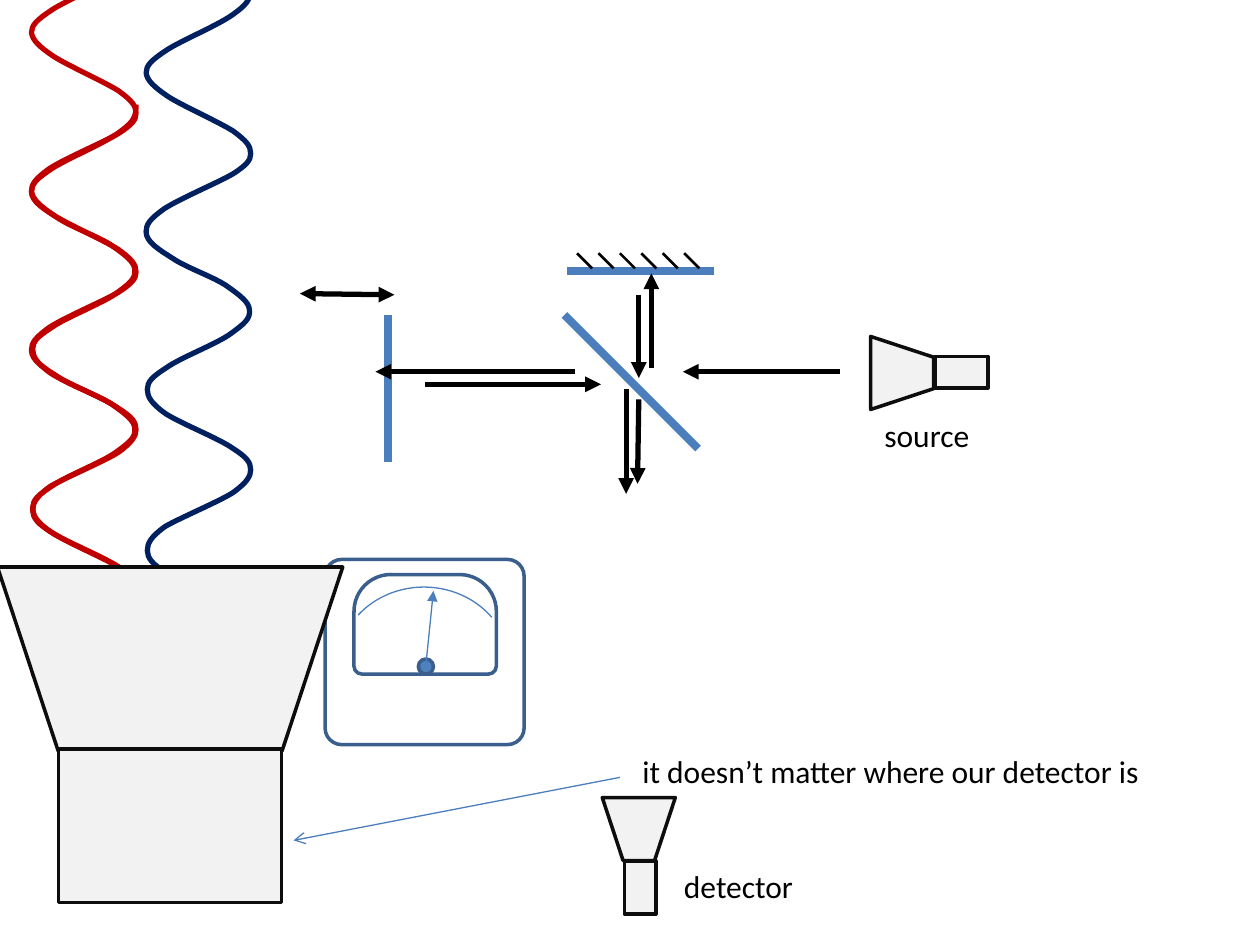
"""Build a slide of an interferometer with its waves, source, detector and meter."""
from dataclasses import dataclass

from lxml.etree import SubElement
from pptx import Presentation
from pptx.dml.color import RGBColor
from pptx.enum.shapes import MSO_CONNECTOR, MSO_SHAPE as Geom
from pptx.enum.text import MSO_AUTO_SIZE
from pptx.oxml.ns import qn
from pptx.util import Inches, Pt


@dataclass(frozen=True)
class Theme:
    font: str = "Calibri"
    label_size: float = 18
    ink: str = "000000"
    outline: str = "0D0D0D"
    body: str = "F2F2F2"
    glass: str = "4B7EBC"
    meter_edge: str = "3A5F8C"
    pivot: str = "4F81BD"
    white: str = "FFFFFF"
    red: str = "C00000"
    navy: str = "002060"
    hair: float = 0.75
    hatch: float = 1.5
    edge: float = 2
    beam: float = 3
    mirror: float = 4.5


THEME = Theme()

WAVE_START = (1.08, -0.43)
WAVE_CURVES = [
    ((1.08, -0.34), (1.07, -0.3), (0.96, -0.22)), ((0.85, -0.13), (0.53, 0), (0.41, 0.08)),
    ((0.29, 0.16), (0.25, 0.2), (0.25, 0.26)), ((0.26, 0.32), (0.31, 0.37), (0.43, 0.45)),
    ((0.54, 0.52), (0.83, 0.65), (0.94, 0.72)), ((1.05, 0.8), (1.08, 0.84), (1.08, 0.9)),
    ((1.08, 0.95), (1.05, 0.99), (0.94, 1.06)), ((0.82, 1.13), (0.51, 1.26), (0.39, 1.34)),
    ((0.28, 1.42), (0.25, 1.46), (0.25, 1.52)), ((0.25, 1.6), (0.35, 1.66), (0.46, 1.73)),
    ((0.56, 1.8), (0.79, 1.88), (0.89, 1.95)), ((0.99, 2.02), (1.07, 2.08), (1.07, 2.14)),
    ((1.08, 2.21), (1.03, 2.25), (0.92, 2.33)), ((0.81, 2.41), (0.52, 2.52), (0.41, 2.6)),
    ((0.3, 2.67), (0.26, 2.71), (0.26, 2.77)), ((0.26, 2.83), (0.29, 2.88), (0.4, 2.96)),
    ((0.52, 3.04), (0.83, 3.16), (0.94, 3.24)), ((1.05, 3.31), (1.08, 3.35), (1.08, 3.41)),
    ((1.08, 3.46), (1.05, 3.51), (0.94, 3.59)), ((0.83, 3.66), (0.52, 3.79), (0.4, 3.86)),
    ((0.29, 3.94), (0.26, 3.99), (0.26, 4.05)), ((0.26, 4.11), (0.3, 4.16), (0.42, 4.23)),
    ((0.54, 4.31), (0.85, 4.44), (0.96, 4.51)), ((1.07, 4.58), (1.06, 4.63), (1.08, 4.66)),
]
UPPER_RED, LOWER_RED, NAVY = (0, 0), (0, 1.26), (0.91, 0.32)

SOURCE = ("source", 6.92, 3.25, 0.92, 0.42)
REMARK = ("it doesn’t matter where our detector is", 5, 5.92, 4.83, 0.4)
DETECTOR = ("detector", 5.33, 6.83, 1.08, 0.4)

MIRRORS = [
    ((4.48, 2.5), (5.54, 3.56)),
    ((3.08, 2.5), (3.08, 3.67)),
    ((5.67, 2.15), (4.5, 2.15)),
]
HATCH_COUNT, HATCH_LEFT, HATCH_TOP, HATCH_PITCH, HATCH_SIZE = 6, 4.58, 2.01, 0.17, 0.12
MIRROR_TRAVEL = ((2.38, 2.33), (3.13, 2.34))
BEAMS = [
    ((6.67, 2.95), (5.42, 2.95)),
    ((4.56, 2.95), (2.98, 2.95)),
    ((3.37, 3.05), (4.77, 3.05)),
    ((4.97, 3.09), (4.97, 3.92)),
    ((5.17, 2.92), (5.17, 2.17)),
    ((5.07, 2.34), (5.07, 3)),
    ((5.07, 3.17), (5.06, 3.84)),
]
METER = [
    (Geom.ROUND_2_SAME_RECTANGLE, (2.58, 4.44, 1.58, 1.47), (0.09, 0.09), THEME.white, THEME.meter_edge, THEME.edge),
    (Geom.ROUND_2_SAME_RECTANGLE, (2.81, 4.56, 1.13, 0.79), (0.37, 0.08), THEME.white, THEME.meter_edge, THEME.edge),
    (Geom.OVAL, (3.32, 5.23, 0.12, 0.12), (), THEME.pivot, THEME.meter_edge, THEME.edge),
    (Geom.ARC, (2.68, 4.66, 1.37, 1.26), (130.84, 194.45), None, THEME.glass, THEME.hair),
]
NEEDLE = ((3.38, 5.28), (3.44, 4.69))
POINTER = ((4.92, 6.17), (2.33, 6.67))
SOURCE_HORN = ((6.87, 2.71, 0.58, 0.5), 90, (7.42, 2.83, 0.42, 0.25), 0)
LARGE_HORN = ((-0.02, 4.5, 2.74, 1.46), 180, (0.74, 5.67, 1.22, 1.77), 90)
SMALL_HORN = ((4.78, 6.33, 0.58, 0.5), 180, (4.87, 6.92, 0.42, 0.25), 90)


def set_line(line, color, width):
    line.color.rgb = RGBColor.from_string(color)
    line.width = Pt(width)


def add_line(slide, ends, color, width, tail=None, head=None):
    (x1, y1), (x2, y2) = ends
    connector = slide.shapes.add_connector(
        MSO_CONNECTOR.STRAIGHT, Inches(x1), Inches(y1), Inches(x2), Inches(y2))
    set_line(connector.line, color, width)
    outline = connector.line._get_or_add_ln()
    for tag, arrow in (("a:headEnd", head), ("a:tailEnd", tail)):
        if arrow:
            SubElement(outline, qn(tag), type=arrow)
    SubElement(connector._element.spPr, qn("a:effectLst"))


def add_part(slide, geometry, box, adjustments, fill, edge, width, rotation=0):
    part = slide.shapes.add_shape(geometry, *map(Inches, box))
    part.shadow.inherit = False
    part.rotation = rotation
    for index, value in enumerate(adjustments):
        part.adjustments[index] = value
    if fill:
        part.fill.solid()
        part.fill.fore_color.rgb = RGBColor.from_string(fill)
    else:
        part.fill.background()
    set_line(part.line, edge, width)


def add_horn(slide, bell, bell_turn, barrel, barrel_turn):
    casing = (THEME.body, THEME.outline, THEME.edge)
    add_part(slide, Geom.TRAPEZOID, bell, (0.33,), *casing, bell_turn)
    add_part(slide, Geom.RECTANGLE, barrel, (), *casing, barrel_turn)


def bend_segments(wave):
    segments = list(wave._element.iter(qn("a:lnTo")))
    for first in range(0, len(segments), 3):
        bend = SubElement(segments[first].getparent(), qn("a:cubicBezTo"))
        for segment in segments[first:first + 3]:
            bend.append(segment[0])
            segment.getparent().remove(segment)


def add_wave(slide, offset, curves, color):
    dx, dy = offset
    start, *rest = [(Inches(x + dx), Inches(y + dy))
                    for x, y in [WAVE_START, *(point for curve in curves for point in curve)]]
    builder = slide.shapes.build_freeform(*start)
    builder.add_line_segments(rest, close=False)
    wave = builder.convert_to_shape()
    bend_segments(wave)
    wave.shadow.inherit = False
    wave.fill.background()
    set_line(wave.line, color, THEME.beam)


def add_label(slide, wording, *box):
    frame = slide.shapes.add_textbox(*map(Inches, box)).text_frame
    frame.word_wrap = True
    frame.auto_size = MSO_AUTO_SIZE.SHAPE_TO_FIT_TEXT
    frame.text = wording
    font = frame.paragraphs[0].font
    font.name, font.size = THEME.font, Pt(THEME.label_size)
    font.color.rgb = RGBColor.from_string(THEME.ink)


def main():
    deck = Presentation()
    deck.slide_width, deck.slide_height = Inches(10), Inches(7.5)
    slide = deck.slides.add_slide(deck.slide_layouts[6])

    add_wave(slide, UPPER_RED, WAVE_CURVES, THEME.red)
    add_wave(slide, NAVY, WAVE_CURVES[:-2], THEME.navy)
    add_label(slide, *SOURCE)

    for mirror in MIRRORS:
        add_line(slide, mirror, THEME.glass, THEME.mirror)
    add_horn(slide, *SOURCE_HORN)
    for index in range(HATCH_COUNT):
        left = HATCH_LEFT + index * HATCH_PITCH
        stroke = ((left, HATCH_TOP), (left + HATCH_SIZE, HATCH_TOP + HATCH_SIZE))
        add_line(slide, stroke, THEME.ink, THEME.hatch)
    add_line(slide, MIRROR_TRAVEL, THEME.ink, THEME.beam, "triangle", "triangle")
    for beam in BEAMS:
        add_line(slide, beam, THEME.ink, THEME.beam, "triangle")
    add_wave(slide, LOWER_RED, WAVE_CURVES, THEME.red)

    for part in METER:
        add_part(slide, *part)
    add_line(slide, NEEDLE, THEME.glass, THEME.hair, "triangle")
    add_line(slide, POINTER, THEME.glass, THEME.hair, "arrow")

    add_horn(slide, *LARGE_HORN)
    add_label(slide, *REMARK)
    add_horn(slide, *SMALL_HORN)
    add_label(slide, *DETECTOR)

    deck.save("out.pptx")


if __name__ == "__main__":
    main()
